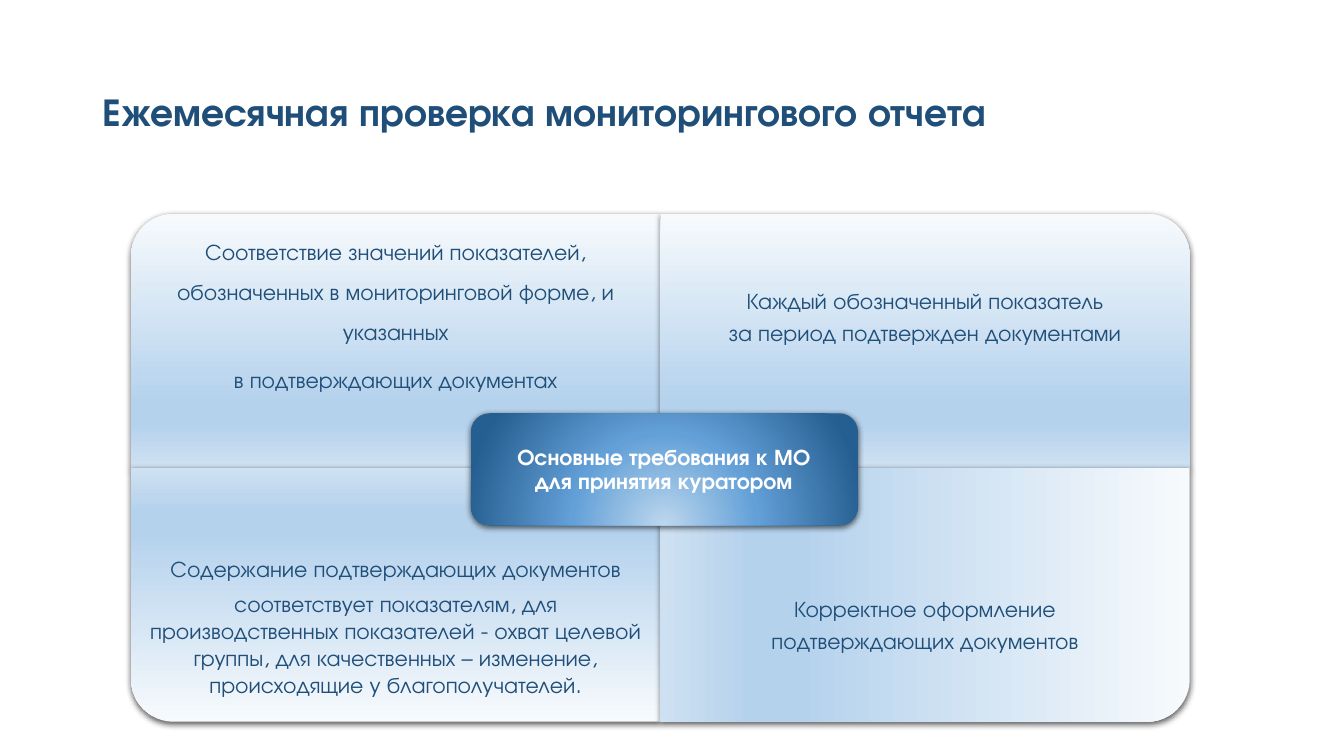
from dataclasses import dataclass

from lxml import etree
from pptx import Presentation
from pptx import util as u
from pptx.dml import color
from pptx.enum import shapes, text
from pptx.oxml import ns

FONT = "TeX Gyre Adventor"
NAVY, WHITE = "1F4E79", "FFFFFF"
LEFT, TOP, COL, ROW = 1.3, 2.12, 5.25, 2.52
TEXT_SHARE = 0.75
PALE = ((0, "F7FAFD"), (74, "B5D2EC"), (83, "B5D2EC"), (100, "CEE1F2"))
DEEP = ((0, "BDD7EE"), (46, "63A0D7"), (100, "255E91"))
LINEAR = '<a:lin ang="5400000" scaled="0"/>'
RADIAL = ('<a:path path="circle"><a:fillToRect l="50000" t="130000" '
          'r="50000" b="-30000"/></a:path>')


@dataclass
class Quadrant:
    col: int
    row: int
    lines: tuple[str, ...]
    spacing: float = 0.9
    rotation: int = 0
    mirrored: bool = False
    top_inset: float = 0.12


QUADRANTS = (
    Quadrant(0, 0, ("Соответствие значений показателей, обозначенных в "
                    "мониторинговой форме, и указанных",
                    "в подтверждающих документах"), 1.5, mirrored=True),
    Quadrant(1, 0, ("Каждый обозначенный показатель",
                    "за период подтвержден документами"), top_inset=0.3),
    Quadrant(0, 1, ("Содержание подтверждающих документов",
                    "соответствует показателям, для производственных "
                    "показателей - охват целевой группы, для качественных – "
                    "изменение, происходящие у благополучателей."),
             1.0, rotation=180),
    Quadrant(1, 1, ("Корректное оформление", "подтверждающих документов"),
             rotation=90),
)


def rgb(value: str) -> color.RGBColor:
    return color.RGBColor.from_string(value)


def box(left: float, top: float, width: float, height: float) -> list[u.Length]:
    return [u.Inches(n) for n in (left, top, width, height)]


def style(p, size: float, hue: str, bold: bool = False) -> None:
    p.font.name = FONT
    p.font.size = u.Pt(size)
    p.font.bold = bold
    p.font.color.rgb = rgb(hue)


def add_panel(group, kind, place: list[u.Length], stops: tuple, shade: str):
    sp = group.shapes.add_shape(kind, *place)
    sp.line.fill.background()
    sp.fill.background()
    colors = "".join(f'<a:gs pos="{pos * 1000}"><a:srgbClr val="{hue}"/></a:gs>'
                     for pos, hue in stops)
    gradient = etree.fromstring(
        f'<a:gradFill {ns.nsdecls("a")} rotWithShape="1">'
        f'<a:gsLst>{colors}</a:gsLst>{shade}</a:gradFill>')
    shadow = etree.fromstring(
        f'<a:effectLst {ns.nsdecls("a")}><a:outerShdw blurRad="57150" '
        'dist="19050" dir="5400000" algn="ctr" rotWithShape="0">'
        '<a:srgbClr val="000000"><a:alpha val="63000"/></a:srgbClr>'
        '</a:outerShdw></a:effectLst>')
    props = sp._element.spPr
    props.replace(props.find(ns.qn("a:noFill")), gradient)
    props.append(shadow)
    return sp


def add_text(group, place: list[u.Length], lines: tuple[str, ...], hue: str,
             spacing: float, inset: float, top_inset: float,
             gap: float = 0, bold: bool = False) -> None:
    tf = group.shapes.add_textbox(*place).text_frame
    tf.word_wrap = True
    tf.vertical_anchor = text.MSO_ANCHOR.MIDDLE
    tf.margin_left = tf.margin_right = tf.margin_bottom = u.Inches(inset)
    tf.margin_top = u.Inches(top_inset)
    tf.text = "\n".join(lines)
    for p in tf.paragraphs:
        p.alignment = text.PP_ALIGN.CENTER
        p.line_spacing = spacing
        p.space_after = u.Pt(gap)
        style(p, 16, hue, bold)


def add_quadrant(group, q: Quadrant) -> None:
    left, top = LEFT + q.col * COL, TOP + q.row * ROW
    width, height = (ROW, COL) if q.rotation % 180 else (COL, ROW)
    place = box(left + (COL - width) / 2, top + (ROW - height) / 2, width, height)
    sp = add_panel(group, shapes.MSO_SHAPE.ROUND_1_RECTANGLE, place, PALE, LINEAR)
    sp.rotation = q.rotation
    if q.mirrored:
        sp._element.spPr.xfrm.set("flipH", "1")
    text_top = top + q.row * ROW * (1 - TEXT_SHARE)
    add_text(group, box(left, text_top, COL, ROW * TEXT_SHARE), q.lines,
             NAVY, q.spacing, 0.12, q.top_inset, gap=5.6)


def add_title(s) -> None:
    title = s.shapes.title
    title.left, title.top, title.width, title.height = box(0.92, 0.4, 11.5, 1.45)
    tf = title.text_frame
    tf.text = "Ежемесячная проверка мониторингового отчета"
    tf.vertical_anchor = text.MSO_ANCHOR.MIDDLE
    p = tf.paragraphs[0]
    p.alignment = text.PP_ALIGN.LEFT
    p.line_spacing = 0.9
    style(p, 28, NAVY, bold=True)


def main() -> None:
    prs = Presentation()
    prs.slide_width, prs.slide_height = u.Inches(13.33), u.Inches(7.5)
    s = prs.slides.add_slide(prs.slide_layouts[5])
    add_title(s)
    group = s.shapes.add_group_shape()
    for q in QUADRANTS:
        add_quadrant(group, q)
    add_panel(group, shapes.MSO_SHAPE.ROUNDED_RECTANGLE,
              box(4.67, 4.1, 3.84, 1.11), DEEP, RADIAL)
    add_text(group, box(4.72, 4.16, 3.73, 1.01),
             ("Основные требования к МО", "для принятия куратором"),
             WHITE, 0.9, 0.07, 0.07, bold=True)
    prs.save("out.pptx")


if __name__ == "__main__":
    main()
